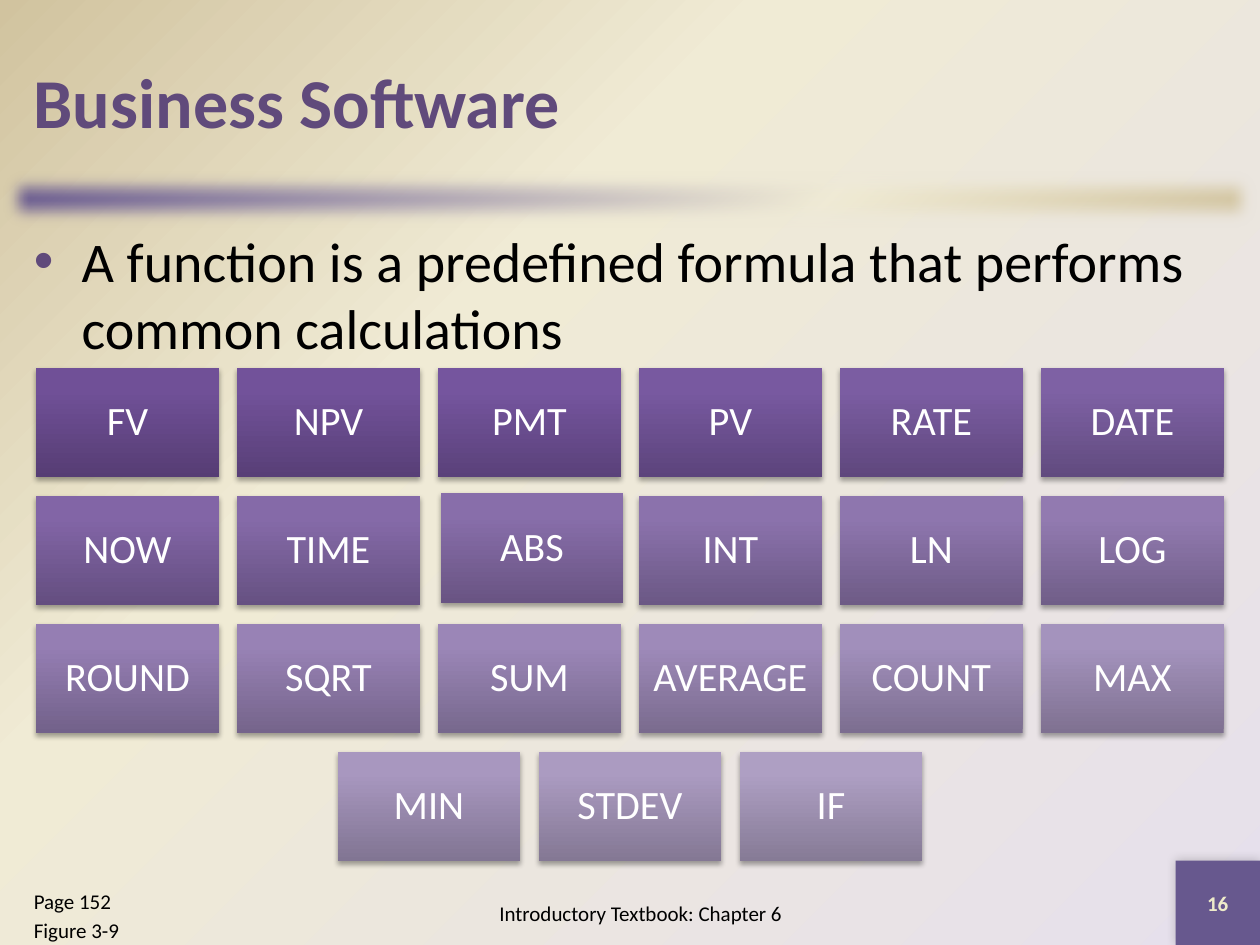
import lxml.etree
import pptx
import pptx.dml.color
import pptx.enum.shapes
import pptx.enum.text
import pptx.oxml.ns
import pptx.util

Inches = pptx.util.Inches
Pt = pptx.util.Pt
RGBColor = pptx.dml.color.RGBColor
PP_ALIGN = pptx.enum.text.PP_ALIGN
MSO_ANCHOR = pptx.enum.text.MSO_ANCHOR
qn = pptx.oxml.ns.qn

FONT = "Calibri"
BLACK = RGBColor(0x00, 0x00, 0x00)
WHITE = RGBColor(0xFF, 0xFF, 0xFF)
PURPLE = RGBColor(0x60, 0x4A, 0x7B)
SLATE = RGBColor(0x67, 0x58, 0x8E)
LAVENDER = RGBColor(0xE6, 0xE0, 0xEC)
CREAM = RGBColor(0xF0, 0xEB, 0xD5)
TAN = RGBColor(0xD1, 0xC3, 0x9F)
PALE_YELLOW = RGBColor(0xEE, 0xEB, 0xCA)

FUNCTION_ROWS = [
    ["FV", "NPV", "PMT", "PV", "RATE", "DATE"],
    ["NOW", "TIME", "ABS", "INT", "LN", "LOG"],
    ["ROUND", "SQRT", "SUM", "AVERAGE", "COUNT", "MAX"],
    ["MIN", "STDEV", "IF"],
]
TILE_WIDTH, TILE_HEIGHT = 1.45, 0.87
TILE_GAP = TILE_WIDTH / 10
TILE_TOP = 2.92
NUDGED = {"ABS": (0.02, -0.02)}

# Tile gradients (bottom, upper, top) at these positions in the sequence
TILE_COLORS = {
    0: (RGBColor(0x56, 0x3D, 0x74), RGBColor(0x70, 0x50, 0x97), RGBColor(0x70, 0x4F, 0x99)),
    2: (RGBColor(0x5A, 0x41, 0x7A), RGBColor(0x75, 0x55, 0x9E), RGBColor(0x76, 0x54, 0xA0)),
    20: (RGBColor(0x86, 0x7B, 0x96), RGBColor(0xAE, 0x9F, 0xC3), RGBColor(0xAE, 0x9F, 0xC4)),
}


def add_element(parent, tag, **attributes):
    values = {name: str(value) for name, value in attributes.items()}
    return lxml.etree.SubElement(parent, qn(tag), values)


def set_gradient(fill, properties, stops, angle=None):
    """Fill with a linear gradient, or radially from the lower right corner."""
    fill.solid()
    solid = properties.find(qn("a:solidFill"))
    gradient = lxml.etree.Element(qn("a:gradFill"), rotWithShape="1")
    stop_list = add_element(gradient, "a:gsLst")
    for position, color in stops:
        stop = add_element(stop_list, "a:gs", pos=position * 1000)
        add_element(stop, "a:srgbClr", val=color)
    if angle is None:
        radial = add_element(gradient, "a:path", path="circle")
        add_element(radial, "a:fillToRect", l=100000, t=100000)
    else:
        add_element(gradient, "a:lin", ang=angle * 60000, scaled=0)
    properties.replace(solid, gradient)


def add_shadow(shape, opacity, blur, distance, direction):
    effects = shape._element.spPr.find(qn("a:effectLst"))
    shadow = add_element(effects, "a:outerShdw", blurRad=Pt(blur), dist=Pt(distance),
                         dir=direction * 60000, algn="ctr", rotWithShape=0)
    color = add_element(shadow, "a:srgbClr", val=BLACK)
    add_element(color, "a:alpha", val=opacity * 1000)


def add_rectangle(slide, left, top, width, height):
    shape = slide.shapes.add_shape(pptx.enum.shapes.MSO_SHAPE.RECTANGLE,
                                   Inches(left), Inches(top), Inches(width), Inches(height))
    shape.shadow.inherit = False
    shape.line.fill.background()
    return shape


def write_text(shape, lines, size, color, bold=False, align=PP_ALIGN.LEFT,
               anchor=MSO_ANCHOR.MIDDLE):
    frame = shape.text_frame
    frame.word_wrap = True
    frame.vertical_anchor = anchor
    frame.text = "\n".join(lines)
    for paragraph in frame.paragraphs:
        paragraph.alignment = align
        paragraph.font.name = FONT
        paragraph.font.size = Pt(size)
        paragraph.font.bold = bold
        paragraph.font.color.rgb = color
    return frame


def add_text(slide, left, top, width, height, lines, size, color, **options):
    box = slide.shapes.add_textbox(Inches(left), Inches(top), Inches(width), Inches(height))
    return write_text(box, lines, size, color, **options)


def add_bullet(paragraph, color):
    properties = paragraph._p.get_or_add_pPr()
    properties.set("marL", str(Inches(0.38)))
    properties.set("indent", str(-Inches(0.38)))
    bullet_color = add_element(properties, "a:buClr")
    add_element(bullet_color, "a:srgbClr", val=color)
    add_element(properties, "a:buFont", typeface="Arial")
    add_element(properties, "a:buChar", char="•")


def tile_stops(index):
    """Blend the tile gradients on either side of this place in the sequence."""
    start, end = (0, 2) if index < 2 else (2, 20)
    share = (index - start) / (end - start)
    colors = [
        RGBColor(*(round(a + (b - a) * share) for a, b in zip(first, last)))
        for first, last in zip(TILE_COLORS[start], TILE_COLORS[end])
    ]
    return list(zip((0, 80, 100), colors))


def add_tile(slide, left, top, name, index):
    tile = add_rectangle(slide, left, top, TILE_WIDTH, TILE_HEIGHT)
    set_gradient(tile.fill, tile._element.spPr, tile_stops(index), 270)
    add_shadow(tile, 35, 3.1, 1.8, 90)
    frame = write_text(tile, [name], 23, WHITE, align=PP_ALIGN.CENTER)
    frame.margin_left = frame.margin_right = Inches(0.1)
    frame.margin_top = frame.margin_bottom = Inches(0.1)
    frame.paragraphs[0].line_spacing = 0.9


def add_function_tiles(slide):
    index = 0
    for row, names in enumerate(FUNCTION_ROWS):
        row_width = len(names) * (TILE_WIDTH + TILE_GAP) - TILE_GAP
        row_left = (10 - row_width) / 2
        top = TILE_TOP + row * (TILE_HEIGHT + TILE_GAP)
        for column, name in enumerate(names):
            shift_x, shift_y = NUDGED.get(name, (0, 0))
            left = row_left + column * (TILE_WIDTH + TILE_GAP)
            add_tile(slide, left + shift_x, top + shift_y, name, index)
            index += 1


def add_divider(slide):
    bar = add_rectangle(slide, 0, 1.33, 10, 0.5)
    set_gradient(bar.fill, bar._element.spPr, [(0, SLATE), (65, CREAM), (100, TAN)], 45)
    effects = bar._element.spPr.find(qn("a:effectLst"))
    add_element(effects, "a:softEdge", rad=Pt(10))


def add_page_number(slide):
    square = add_rectangle(slide, 9.33, 6.83, 0.67, 0.67)
    square.fill.solid()
    square.fill.fore_color.rgb = SLATE
    add_shadow(square, 20, 6, 0, 225)
    write_text(square, ["16"], 12, PALE_YELLOW, bold=True, align=PP_ALIGN.CENTER)


def main():
    presentation = pptx.Presentation()
    presentation.slide_width = Inches(10)
    presentation.slide_height = Inches(7.5)
    slide = presentation.slides.add_slide(presentation.slide_layouts[6])

    # Background and divider
    background_fill = slide.background.fill
    background_fill.solid()
    set_gradient(background_fill, slide.element.find(".//" + qn("p:bgPr")),
                 [(0, LAVENDER), (65, CREAM), (100, TAN)])
    add_divider(slide)

    # Title and body
    add_text(slide, 0.17, 0.17, 9.67, 1.25, ["Business Software"], 40, PURPLE, bold=True)
    body = add_text(slide, 0.17, 1.75, 9.67, 1.17,
                    ["A function is a predefined formula that performs common calculations"],
                    32, BLACK, anchor=MSO_ANCHOR.TOP)
    add_bullet(body.paragraphs[0], PURPLE)

    add_function_tiles(slide)

    # Footer
    add_text(slide, 3, 7, 4.17, 0.5, ["Introductory Textbook: Chapter 6"], 12, BLACK,
             align=PP_ALIGN.CENTER)
    reference = add_text(slide, 0.17, 7, 1.83, 0.5, ["Page 152", "Figure 3-9"], 12, BLACK,
                         anchor=MSO_ANCHOR.TOP)
    reference.paragraphs[1].space_before = Pt(2.4)
    add_page_number(slide)

    presentation.save("out.pptx")


if __name__ == "__main__":
    main()
